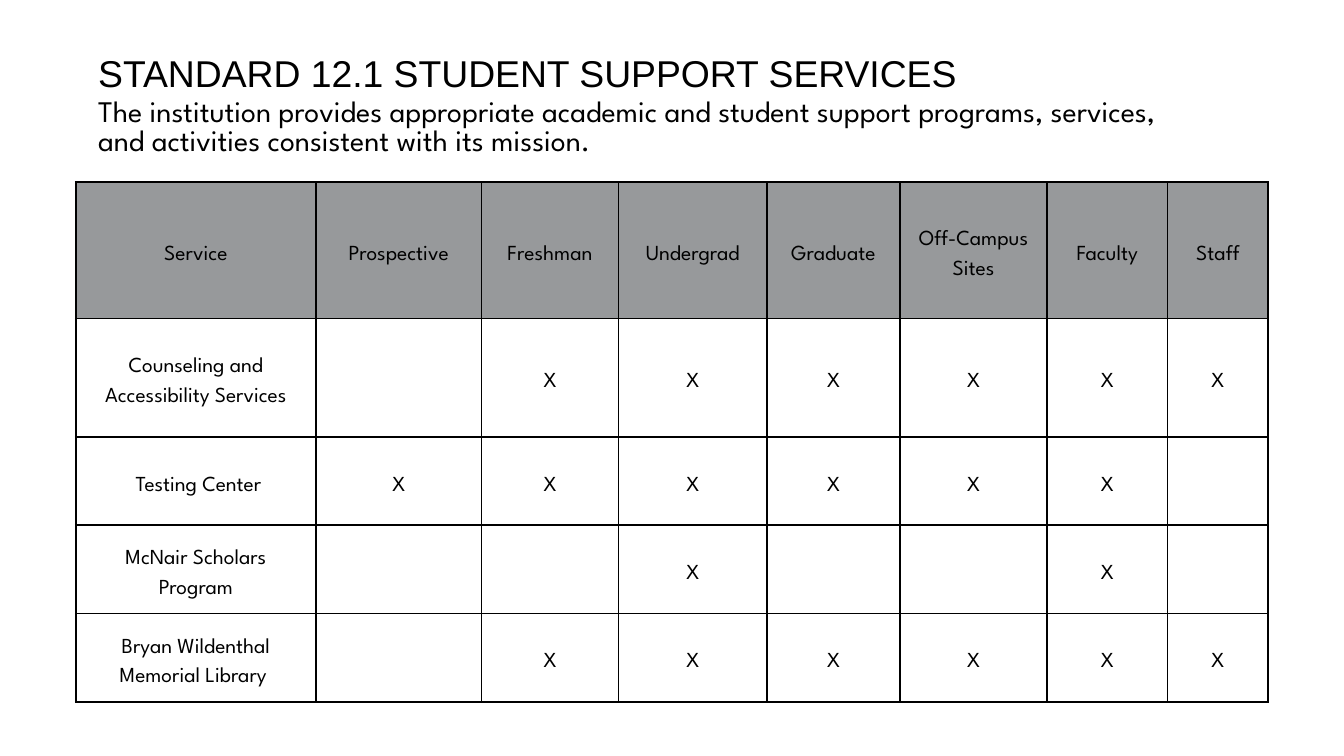
import dataclasses

import pptx
import pptx.dml.color
import pptx.enum.text
import pptx.oxml
import pptx.oxml.ns
import pptx.util
from pptx.util import Cm, Pt


@dataclasses.dataclass(frozen=True)
class Theme:
    ink: str = "000000"
    header: str = "97999B"
    paper: str = "FFFFFF"
    title_font: str = "Arial"
    body_font: str = "League Spartan"
    title_size: float = 40
    intro_size: float = 32
    header_size: float = 23
    cell_size: float = 22.9
    border: float = 2.25


theme = Theme()
PP_ALIGN = pptx.enum.text.PP_ALIGN
MSO_ANCHOR = pptx.enum.text.MSO_ANCHOR


def write(tf, text, *, size, spacing, font=theme.body_font, align=PP_ALIGN.LEFT):
    """Fill a text frame with one formatted paragraph; spacing is in points."""
    tf.word_wrap = True
    p = tf.paragraphs[0]
    p.alignment = align
    p.line_spacing = Pt(spacing)
    r = p.add_run()
    r.text = text
    r.font.name = font
    r.font.size = Pt(size)
    r.font.bold = False
    r.font.color.rgb = pptx.dml.color.RGBColor.from_string(theme.ink)


def add_borders(cell):
    tc_pr = cell._tc.get_or_add_tcPr()
    for side in ("lnL", "lnR", "lnT", "lnB"):
        tc_pr.append(pptx.oxml.parse_xml(
            f'<a:{side} {pptx.oxml.ns.nsdecls("a")} w="{Pt(theme.border)}">'
            f'<a:solidFill><a:srgbClr val="{theme.ink}"/></a:solidFill></a:{side}>'))


prs = pptx.Presentation()
prs.slide_width, prs.slide_height = Cm(50.8), Cm(28.58)
s = prs.slides.add_slide(prs.slide_layouts[5])

# Heading and introduction
left, width = Cm(3.71), Cm(40.36)
title = s.shapes.title
title.left, title.top, title.width, title.height = left, Cm(2.16), width, Cm(1.47)
intro = s.shapes.add_textbox(left, Cm(3.76), width, Cm(2.29))
for sp in (title, intro):
    tf = sp.text_frame
    tf.margin_left = tf.margin_right = tf.margin_top = tf.margin_bottom = 0
    tf.vertical_anchor = MSO_ANCHOR.TOP
    tf.auto_size = pptx.enum.text.MSO_AUTO_SIZE.NONE

write(title.text_frame, "STANDARD 12.1 STUDENT SUPPORT SERVICES",
      size=theme.title_size, spacing=40, font=theme.title_font)
write(intro.text_frame,
      "The institution provides appropriate academic and student support programs, "
      "services, and activities consistent with its mission.",
      size=theme.intro_size, spacing=31)

# Services and the groups they serve
headers = ["Service", "Prospective", "Freshman", "Undergrad", "Graduate",
           "Off-Campus Sites", "Faculty", "Staff"]
services = [
    ("Counseling and Accessibility Services", "-XXXXXX"),
    (" Testing Center", "XXXXXX-"),
    ("McNair Scholars Program", "--X--X-"),
    ("Bryan Wildenthal Memorial Library ", "-XXXXXX"),
]
rows = [headers] + [[name, *marks.replace("-", " ")] for name, marks in services]
col_widths = [9.09, 6.25, 5.18, 5.61, 5.03, 5.56, 4.55, 3.81]
row_heights = [5.16, 4.47, 3.33, 3.35, 3.35]

table = s.shapes.add_table(len(rows), len(headers), Cm(2.86), Cm(6.88),
                           Cm(sum(col_widths)), Cm(sum(row_heights))).table
table.horz_banding = False
for col, col_width in zip(table.columns, col_widths):
    col.width = Cm(col_width)
for row, row_height in zip(table.rows, row_heights):
    row.height = Cm(row_height)

for i, values in enumerate(rows):
    fill = theme.paper if i else theme.header
    size = theme.cell_size if i else theme.header_size
    spacing = 32.1 if i else 32.2
    for j, value in enumerate(values):
        cell = table.cell(i, j)
        add_borders(cell)
        cell.fill.solid()
        cell.fill.fore_color.rgb = pptx.dml.color.RGBColor.from_string(fill)
        cell.vertical_anchor = MSO_ANCHOR.MIDDLE
        cell.margin_left = cell.margin_right = Cm(0.48)
        cell.margin_top = cell.margin_bottom = Cm(0.48)
        if value.strip():
            write(cell.text_frame, value, size=size, spacing=spacing,
                  align=PP_ALIGN.CENTER)

prs.save("out.pptx")
